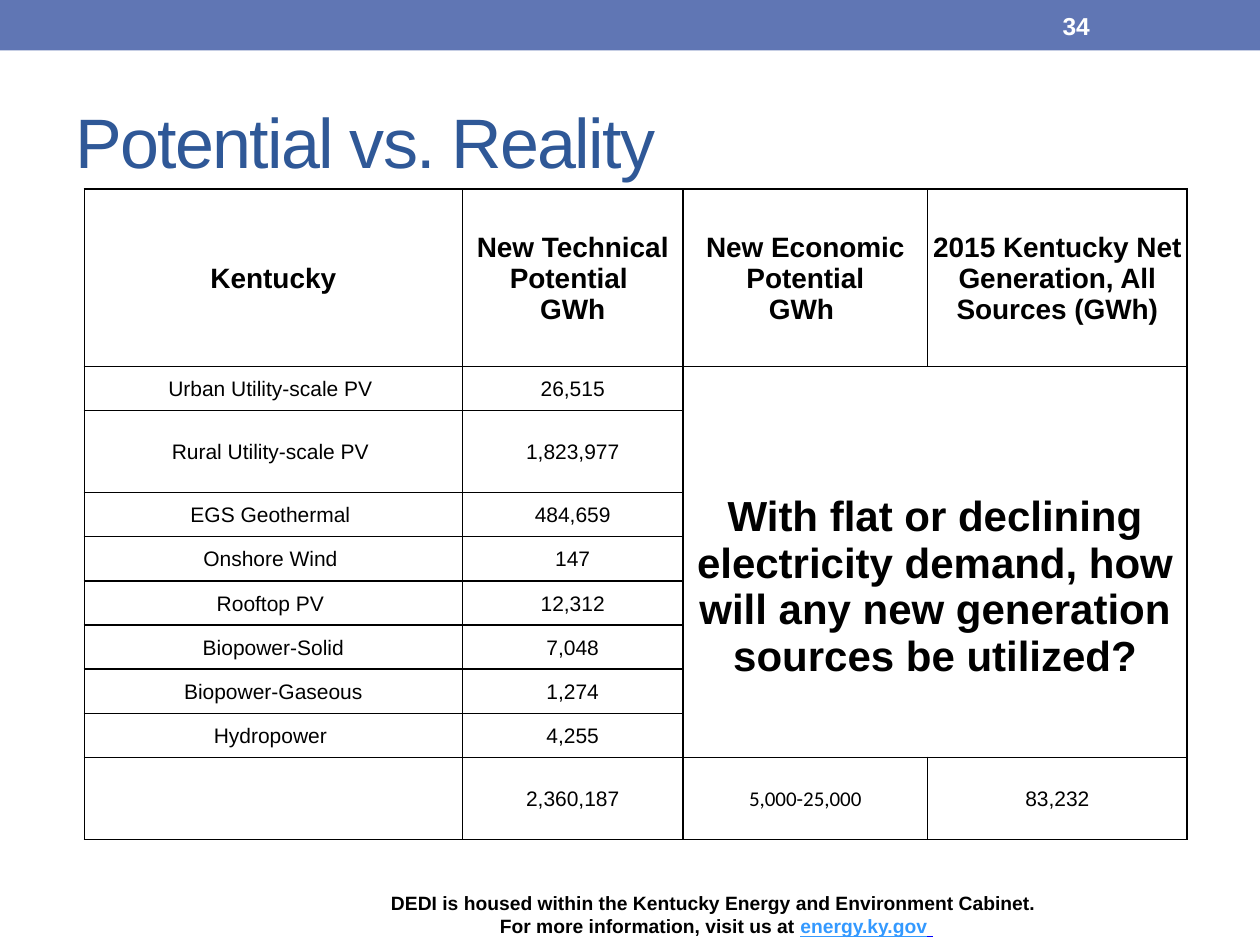
from lxml.etree import SubElement
from pptx import Presentation
from pptx.dml.color import RGBColor
from pptx.enum.shapes import MSO_SHAPE
from pptx.enum.text import MSO_ANCHOR, MSO_AUTO_SIZE, PP_ALIGN
from pptx.oxml.ns import qn
from pptx.util import Cm, Pt

COLORS = {"bar": "6076B4", "title": "2F5897", "text": "000000",
          "white": "FFFFFF", "link": "3399FF", "space": "0000FF"}
HEADS = ["Kentucky", "New Technical Potential \nGWh",
         "New Economic Potential\nGWh ",
         "2015 Kentucky Net Generation, All Sources (GWh)"]
SOURCES = [
    ("Urban Utility-scale PV ", "26,515"),
    ("Rural Utility-scale PV ", "1,823,977"),
    ("EGS Geothermal ", "484,659"),
    ("Onshore Wind ", "147"),
    ("Rooftop PV ", "12,312"),
    ("Biopower-Solid", "7,048"),
    ("Biopower-Gaseous", "1,274"),
    ("Hydropower ", "4,255"),
]
TOTALS = ["", "2,360,187", "5,000-25,000", "83,232"]
QUESTION = ("With flat or declining electricity demand, how will any new "
            "generation sources be utilized?")
WIDTHS = [7.62, 4.45, 4.93, 5.23]
HEAD, ROW, TALL = 3.58, 0.89, 1.65


def color(name):
    return RGBColor.from_string(COLORS[name])


def style(run, size, tint="text", bold=False, face="Arial"):
    font = run.font
    font.size, font.bold, font.name = Pt(size), bold, face
    font.color.rgb = color(tint)


def add_bar(slide):
    bar = slide.shapes.add_shape(MSO_SHAPE.RECTANGLE, 0, 0, Cm(25.4), Cm(1.02))
    bar.shadow.inherit = False
    bar.fill.solid()
    bar.fill.fore_color.rgb = color("bar")
    bar.line.fill.background()


def set_title(slide, text):
    title = slide.shapes.title
    title.left, title.top = Cm(1.27), Cm(1.47)
    title.width, title.height = Cm(22.86), Cm(2.74)
    frame = title.text_frame
    frame.text = text
    frame.auto_size = MSO_AUTO_SIZE.NONE
    frame.vertical_anchor = MSO_ANCHOR.MIDDLE
    para = frame.paragraphs[0]
    para.alignment = PP_ALIGN.LEFT
    run = para.runs[0]
    style(run, 40, "title")
    run.font._element.set("spc", "-100")


def add_box(slide, left, top, width, height):
    box = slide.shapes.add_textbox(Cm(left), Cm(top), Cm(width), Cm(height))
    box.text_frame.word_wrap = True
    return box.text_frame


def add_number(slide, text):
    frame = add_box(slide, 21.17, 0.05, 2.96, 0.92)
    frame.vertical_anchor = MSO_ANCHOR.MIDDLE
    frame.text = text
    style(frame.paragraphs[0].runs[0], 14, "white", True)


def add_footer(slide):
    frame = add_box(slide, 4.5, 17.85, 19.88, 1.2)
    frame.text = ("DEDI is housed within the Kentucky Energy and Environment "
                  "Cabinet. \nFor more information, visit us at ")
    last = frame.paragraphs[1]
    for text in ("energy.ky.gov", " "):
        last.add_run().text = text
    for para in frame.paragraphs:
        para.alignment = PP_ALIGN.CENTER
        for run in para.runs:
            style(run, 11, "text", True)
    for run, tint in zip(last.runs[1:], ("link", "space")):
        run.font.color.rgb = color(tint)
        run.font.underline = True


def add_edges(cell):
    """Draw a thin line on all four sides of the cell."""
    props = cell._tc.get_or_add_tcPr()
    for spot, side in enumerate(("lnL", "lnR", "lnT", "lnB")):
        line = SubElement(props, qn(f"a:{side}"), w=str(Pt(1)))
        fill = SubElement(line, qn("a:solidFill"))
        SubElement(fill, qn("a:srgbClr"), val=COLORS["text"])
        props.insert(spot, line)


def fill_cell(cell, text, size=12, bold=False, face="Arial"):
    cell.text = text
    for para in cell.text_frame.paragraphs:
        para.alignment = PP_ALIGN.CENTER
        for run in para.runs:
            style(run, size, "text", bold, face)


def add_table(slide):
    heights = [HEAD] + [ROW] * len(SOURCES) + [TALL]
    heights[2] = TALL
    table = slide.shapes.add_table(
        len(heights), len(WIDTHS), Cm(1.7), Cm(3.81),
        Cm(sum(WIDTHS)), Cm(sum(heights))).table
    table.first_row = table.horz_banding = False
    for col, width in zip(table.columns, WIDTHS):
        col.width = Cm(width)
    for row, height in zip(table.rows, heights):
        row.height = Cm(height)
    for cell in table.iter_cells():
        cell.fill.background()
        add_edges(cell)
        cell.vertical_anchor = MSO_ANCHOR.MIDDLE
        cell.margin_left = cell.margin_right = cell.margin_top = Cm(0.03)
        cell.margin_bottom = 0

    end = len(heights) - 1
    for c, text in enumerate(HEADS):
        fill_cell(table.cell(0, c), text, 16, True)
    for r, pair in enumerate(SOURCES, 1):
        for c, text in enumerate(pair):
            fill_cell(table.cell(r, c), text)
    for c, text in enumerate(TOTALS):
        fill_cell(table.cell(end, c), text, face="Calibri" if c == 2 else "Arial")

    note = table.cell(1, 2)
    note.merge(table.cell(end - 1, 3))
    fill_cell(note, QUESTION, 24, True)
    note.margin_top = Cm(1)


def main():
    deck = Presentation()
    deck.slide_width, deck.slide_height = Cm(25.4), Cm(19.05)
    slide = deck.slides.add_slide(deck.slide_layouts[5])
    add_bar(slide)
    add_footer(slide)
    set_title(slide, "Potential vs. Reality")
    add_number(slide, "34")
    add_table(slide)
    deck.save("out.pptx")


if __name__ == "__main__":
    main()
